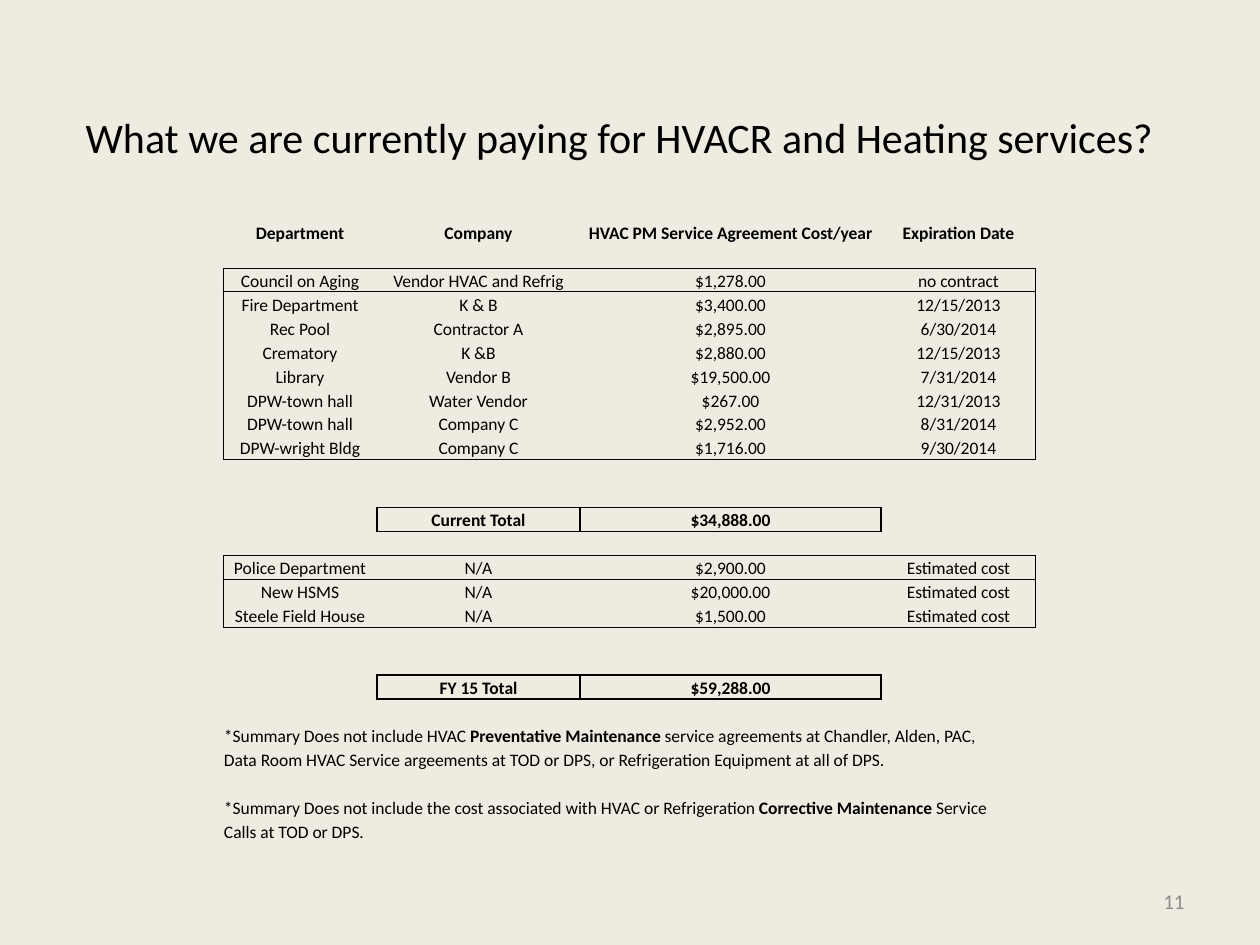
import pptx
import pptx.dml.color
import pptx.enum.text
import pptx.oxml
import pptx.oxml.ns
import pptx.util

PX = 914400 // 126
FONT = "Calibri"
COLORS = {"background": "EEECE1", "text": "000000", "number": "8C8C8C"}
NO_STYLE_NO_GRID = "{2D5ABB26-0587-4C30-8999-92F81FD0307C}"
ALIGN = pptx.enum.text.PP_ALIGN
ANCHOR = pptx.enum.text.MSO_ANCHOR

COLUMN_WIDTHS = [154, 203, 301, 155]
ROW_COUNT, ROW_HEIGHT = 26, 24
HEADINGS = ["Department", "Company", "HVAC PM Service Agreement Cost/year", "Expiration Date"]
CONTRACTS = [
    ["Council on Aging", "Vendor HVAC and Refrig", "$1,278.00", "no contract"],
    ["Fire Department", "K & B", "$3,400.00", "12/15/2013"],
    ["Rec Pool", "Contractor A", "$2,895.00", "6/30/2014"],
    ["Crematory", "K &B", "$2,880.00", "12/15/2013"],
    ["Library", "Vendor B", "$19,500.00", "7/31/2014"],
    ["DPW-town hall", "Water Vendor", "$267.00", "12/31/2013"],
    ["DPW-town hall", "Company C", "$2,952.00", "8/31/2014"],
    ["DPW-wright Bldg", "Company C", "$1,716.00", "9/30/2014"],
]
ESTIMATES = [
    ["Police Department", "N/A", "$2,900.00", "Estimated cost"],
    ["New HSMS", "N/A", "$20,000.00", "Estimated cost"],
    ["Steele Field House", "N/A", "$1,500.00", "Estimated cost"],
]
# Each note line: table row, then text pieces that alternate plain and bold.
NOTES = [
    (21, ["*Summary Does not include HVAC ", "Preventative Maintenance",
          " service agreements at Chandler, Alden, PAC,"]),
    (22, ["Data Room HVAC Service argeements at TOD or DPS, or Refrigeration Equipment at all of DPS."]),
    (24, ["*Summary Does not include the cost associated with HVAC or Refrigeration ",
          "Corrective Maintenance", " Service"]),
    (25, ["Calls at TOD or DPS."]),
]


def px(*lengths):
    return [n * PX for n in lengths]


def format_paragraph(p, size, color="text", align=ALIGN.LEFT, bold=None):
    p.alignment = align
    p.font.name = FONT
    p.font.size = pptx.util.Pt(size)
    p.font.bold = bold
    p.font.color.rgb = pptx.dml.color.RGBColor.from_string(COLORS[color])


def add_title(s, box, text):
    sp = s.shapes.title
    sp.left, sp.top, sp.width, sp.height = px(*box)
    tf = sp.text_frame
    tf.text = text
    tf.vertical_anchor = ANCHOR.TOP
    tf.auto_size = pptx.enum.text.MSO_AUTO_SIZE.SHAPE_TO_FIT_TEXT
    format_paragraph(tf.paragraphs[0], 24)


def add_slide_number(s, box, text):
    tf = s.shapes.add_textbox(*px(*box)).text_frame
    tf.word_wrap = True
    tf.vertical_anchor = ANCHOR.MIDDLE
    tf.text = text
    format_paragraph(tf.paragraphs[0], 12, "number", ALIGN.RIGHT)


def clear_cell(cell):
    """Strip the fill and margins, and keep the empty line small."""
    cell.fill.background()
    cell.vertical_anchor = ANCHOR.BOTTOM
    cell.margin_left = cell.margin_right = cell.margin_top = PX
    cell.margin_bottom = 0
    p = cell.text_frame.paragraphs[0]
    format_paragraph(p, 10)
    p._p.get_or_add_endParaRPr().set("sz", "1000")


def fill_row(table, row, texts, first_column=0, bold=False):
    for column, text in enumerate(texts, first_column):
        cell = table.cell(row, column)
        cell.text = text
        format_paragraph(cell.text_frame.paragraphs[0], 10, align=ALIGN.CENTER, bold=bold)


def fill_note(table, row, pieces):
    cell = table.cell(row, 0)
    cell.merge(table.cell(row, len(COLUMN_WIDTHS) - 1))
    p = cell.text_frame.paragraphs[0]
    for i, piece in enumerate(pieces):
        r = p.add_run()
        r.text = piece
        r.font.bold = i % 2 == 1


def outline_cells(table, top, bottom, left, right, points):
    """Draw one border around a block of cells, ends included."""
    for row in range(top, bottom + 1):
        for column in range(left, right + 1):
            edges = {"lnL": column == left, "lnR": column == right,
                     "lnT": row == top, "lnB": row == bottom}
            tc_pr = table.cell(row, column)._tc.get_or_add_tcPr()
            for i, tag in enumerate(tag for tag, drawn in edges.items() if drawn):
                tc_pr.insert(i, pptx.oxml.parse_xml(
                    f'<a:{tag} {pptx.oxml.ns.nsdecls("a")} w="{pptx.util.Pt(points)}">'
                    f'<a:solidFill><a:srgbClr val="{COLORS["text"]}"/></a:solidFill></a:{tag}>'))


def add_cost_table(s, left, top):
    size = px(left, top, sum(COLUMN_WIDTHS), ROW_COUNT * ROW_HEIGHT)
    table = s.shapes.add_table(ROW_COUNT, len(COLUMN_WIDTHS), *size).table
    table.first_row = table.horz_banding = False
    table._tbl.tblPr.find(pptx.oxml.ns.qn("a:tableStyleId")).text = NO_STYLE_NO_GRID
    for column, width in zip(table.columns, COLUMN_WIDTHS):
        column.width = width * PX
    for row in table.rows:
        row.height = ROW_HEIGHT * PX
    for cell in table.iter_cells():
        clear_cell(cell)

    fill_row(table, 0, HEADINGS, bold=True)
    for first, block in ((2, CONTRACTS), (14, ESTIMATES)):
        for row, texts in enumerate(block, first):
            fill_row(table, row, texts)
        outline_cells(table, first, first + len(block) - 1, 0, 3, 0.5)
    for row, texts in ((12, ["Current Total", "$34,888.00"]), (19, ["FY 15 Total", "$59,288.00"])):
        fill_row(table, row, texts, first_column=1, bold=True)
        outline_cells(table, row, row, 1, 2, 1)
    for row, pieces in NOTES:
        fill_note(table, row, pieces)


def main():
    prs = pptx.Presentation()
    prs.slide_width, prs.slide_height = px(1260, 945)
    s = prs.slides.add_slide(prs.slide_layouts[5])
    fill = s.background.fill
    fill.solid()
    fill.fore_color.rgb = pptx.dml.color.RGBColor.from_string(COLORS["background"])
    add_title(s, (73, 105, 1124, 63), "What we are currently paying for HVACR and Heating services?")
    add_slide_number(s, (903, 876, 294, 50), "11")
    add_cost_table(s, 223, 220)
    prs.save("out.pptx")


if __name__ == "__main__":
    main()
